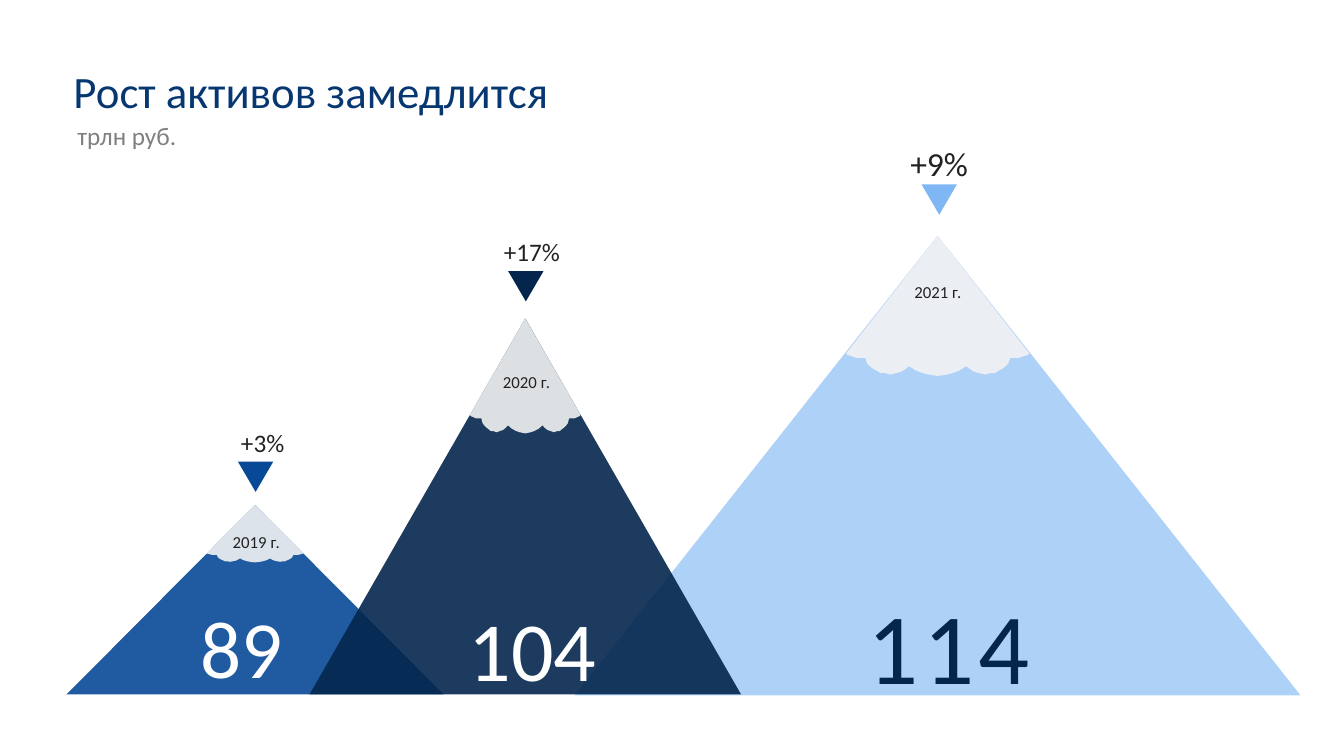
from lxml import etree
from pptx import Presentation
from pptx.dml.color import RGBColor
from pptx.enum import shapes, text
from pptx.oxml.ns import qn
from pptx.util import Inches, Pt

BLUE = RGBColor(0x08, 0x49, 0x97)
NAVY = RGBColor(0x04, 0x26, 0x4D)
SKY = RGBColor(0xA5, 0xCC, 0xF7)
SKY_MARKER = RGBColor(0x7F, 0xB7, 0xF4)
SNOW = RGBColor(0xF2, 0xF2, 0xF2)
TITLE = RGBColor(0x06, 0x37, 0x71)
GREY = RGBColor(0x80, 0x80, 0x80)
DARK = RGBColor(0x22, 0x22, 0x22)
WHITE = RGBColor(0xFF, 0xFF, 0xFF)

# Right half of the snow edge, from bottom centre to the slope:
# shares of the cap's half width and of its height
SNOW_EDGE = [
    (0, 1), (0.1, 0.99), (0.16, 0.98), (0.24, 0.96), (0.31, 0.93),
    (0.35, 0.95), (0.4, 0.97), (0.46, 0.98), (0.52, 0.99), (0.57, 0.98),
    (0.62, 0.98), (0.67, 0.96), (0.7, 0.95), (0.74, 0.93), (0.77, 0.91),
    (0.78, 0.89), (0.79, 0.87), (0.84, 0.87), (0.89, 0.87), (0.93, 0.86),
    (0.98, 0.85), (1, 0.84),
]


def add_outline(parent, points, color):
    """Draw a closed outline at 90% opacity; points are in inches."""
    corners = [(Inches(x), Inches(y)) for x, y in points]
    builder = parent.build_freeform(*corners[0])
    builder.add_line_segments(corners[1:], close=True)
    outline = builder.convert_to_shape()
    outline.shadow.inherit = False
    outline.line.fill.background()
    outline.fill.solid()
    outline.fill.fore_color.rgb = color
    tint = outline.fill._xPr.find(qn("a:solidFill"))[0]
    etree.SubElement(tint, qn("a:alpha")).set("val", "90000")


def add_text(parent, words, place, size, color, wrap=True, align=None):
    box = parent.add_textbox(*[Inches(length) for length in place])
    box.text_frame.word_wrap = wrap
    box.text_frame.auto_size = text.MSO_AUTO_SIZE.SHAPE_TO_FIT_TEXT
    para = box.text_frame.paragraphs[0]
    para.alignment = align
    span = para.add_run()
    span.text = words
    span.font.name = "Calibri"
    span.font.size = Pt(size)
    span.font.color.rgb = color
    return para


deck = Presentation()
deck.slide_width, deck.slide_height = Inches(13.33), Inches(7.5)
page = deck.slides.add_slide(deck.slide_layouts[6])

# Mountains with snow caps: apex, base half width, base line, cap size, colour
mountains = [
    (2.53, 5.01, 1.87, 6.89, 0.48, 0.57, BLUE),
    (9.3, 2.34, 3.6, 6.9, 0.91, 1.39, SKY),
    (5.21, 3.16, 2.14, 6.89, 0.55, 1.14, NAVY),
]
for apex, top, half, base, cap_half, cap_height, color in mountains:
    group = page.shapes.add_group_shape().shapes
    add_outline(group, [(apex - half, base), (apex, top), (apex + half, base)], color)
    right = [(apex + u * cap_half, top + v * cap_height) for u, v in SNOW_EDGE]
    left = [(2 * apex - x, y) for x, y in reversed(right[1:])]
    add_outline(group, left + right + [(apex, top)], SNOW)

# Growth labels with markers pointing down at the peaks
growth = [
    ("+9%", 24, (8.73, 1.37, 1.17, 0.5), 9.14, 1.83, SKY_MARKER),
    ("+17%", 18, (4.75, 2.3, 1.05, 0.4), 5.04, 2.69, NAVY),
    ("+3%", 18, (2.08, 4.19, 1.05, 0.4), 2.36, 4.58, BLUE),
]
for words, size, place, left, top, color in growth:
    group = page.shapes.add_group_shape().shapes
    marker = group.add_shape(shapes.MSO_SHAPE.ISOSCELES_TRIANGLE,
                             Inches(left), Inches(top), Inches(0.35), Inches(0.3))
    marker.rotation = 180
    marker.shadow.inherit = False
    marker.line.fill.background()
    marker.fill.solid()
    marker.fill.fore_color.rgb = color
    add_text(group, words, place, size, DARK, align=text.PP_ALIGN.CENTER)

# Title and unit
heading = add_text(page.shapes, "Рост активов замедлится", (0.63, 0.7, 9.02, 0.55), 32, TITLE)
heading.line_spacing = Pt(30)
heading.space_before = Pt(10)
add_text(page.shapes, "трлн руб.", (0.67, 1.14, 1.24, 0.4), 18, GREY, wrap=False)

# Years on the caps
for year, left, top in [("2019 г.", 2.21, 5.23), ("2020 г.", 4.89, 3.64), ("2021 г.", 8.97, 2.75)]:
    add_text(page.shapes, year, (left, top, 0.68, 0.3), 12, DARK, wrap=False)

# Asset totals at the foot of each mountain
total = add_text(page.shapes, "114", (8.51, 5.74, 1.87, 1.31), 72, NAVY)
total.runs[0].font._element.set("spc", "300")
add_text(page.shapes, "104", (4.55, 5.88, 1.66, 1.11), 60, WHITE)
add_text(page.shapes, "89", (1.89, 5.88, 1.33, 1.11), 58, WHITE)

deck.save("out.pptx")
